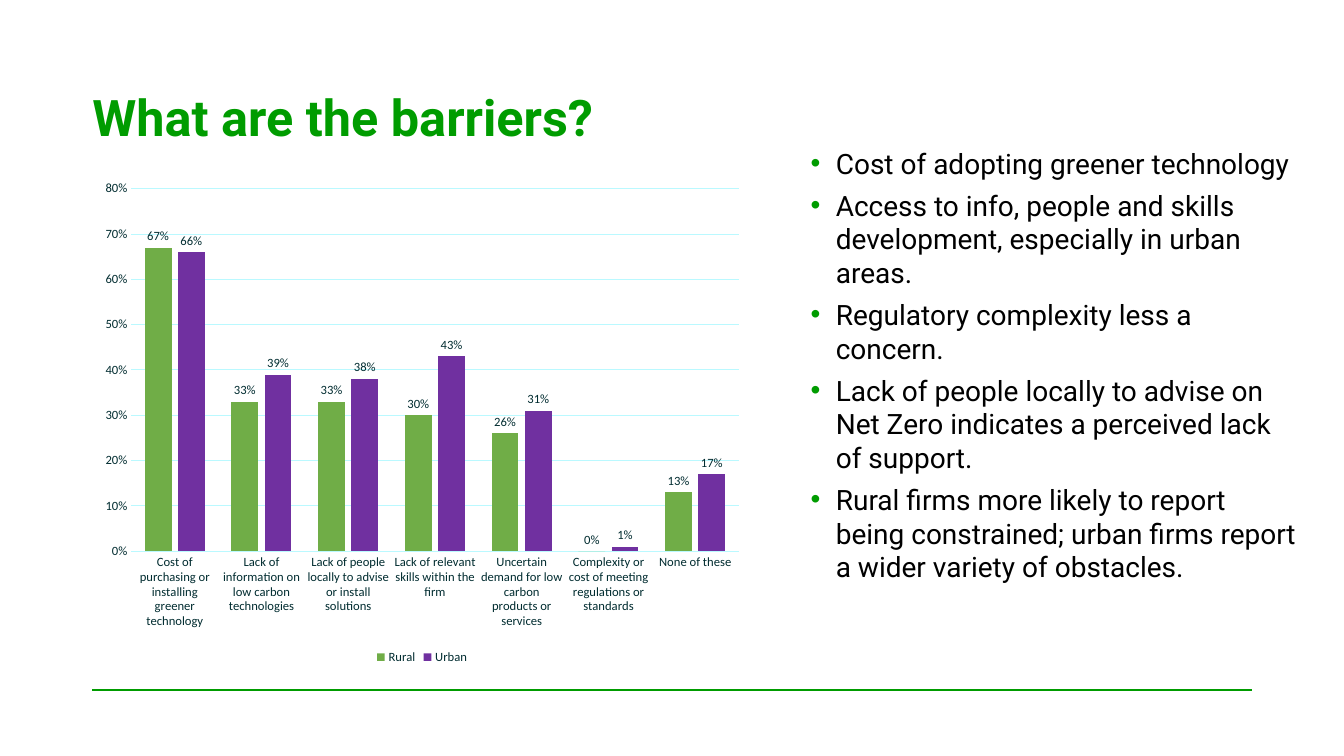
from dataclasses import dataclass

from lxml import etree
from pptx import Presentation
from pptx import util as u
from pptx.chart import data as cd
from pptx.dml import color as col
from pptx.enum import chart as ch
from pptx.enum import shapes, text
from pptx.oxml import ns


@dataclass(frozen=True)
class Theme:
    """Colours, fonts and type sizes of the slide."""
    green: str = "009C00"
    ink: str = "000000"
    label: str = "002C30"
    grid: str = "BAF9FF"
    rural: str = "70AD47"
    urban: str = "7030A0"
    face: str = "Roboto"
    plot: str = "Calibri"
    head: int = 36
    body: int = 20
    base: int = 10
    small: int = 9


class Deck:
    """Draws styled elements on the current slide."""

    def __init__(self, theme):
        self.theme = theme
        self.prs = Presentation()
        self.prs.slide_width, self.prs.slide_height = u.Pt(960), u.Pt(540)
        self.slide = self.prs.slides.add_slide(self.prs.slide_layouts[6])

    def rgb(self, tone):
        return col.RGBColor.from_string(tone)

    def font(self, font, face, size, tone, bold=False):
        font.name, font.size, font.bold = face, u.Pt(size), bold
        font.color.rgb = self.rgb(tone)

    def small(self, font):
        self.font(font, self.theme.plot, self.theme.small, self.theme.label)

    def stroke(self, line, tone, width):
        line.color.rgb = self.rgb(tone)
        line.width = u.Pt(width)

    def rule(self, left, top, right):
        line = self.slide.shapes.add_connector(
            shapes.MSO_CONNECTOR.STRAIGHT, u.Pt(left), u.Pt(top), u.Pt(right), u.Pt(top))
        self.stroke(line.line, self.theme.green, 1)
        etree.SubElement(line._element.spPr, ns.qn("a:effectLst"))

    def frame(self, box, anchor):
        frame = self.slide.shapes.add_textbox(*map(u.Pt, box)).text_frame
        frame.word_wrap, frame.vertical_anchor = True, anchor
        frame.margin_left = frame.margin_right = 0
        frame.margin_top = frame.margin_bottom = 0
        return frame

    def title(self, words, box):
        para = self.frame(box, text.MSO_ANCHOR.BOTTOM).paragraphs[0]
        para.line_spacing = 0.9
        run = para.add_run()
        run.text = words
        self.font(run.font, self.theme.face, self.theme.head, self.theme.green, True)

    def bullets(self, items, box):
        frame = self.frame(box, text.MSO_ANCHOR.TOP)
        for i, words in enumerate(items):
            para = frame.add_paragraph() if i else frame.paragraphs[0]
            para.space_before = u.Pt(6 if i else 0)
            props = para._p.get_or_add_pPr()
            props.set("marL", str(u.Pt(18)))
            props.set("indent", str(u.Pt(-18)))
            tone = etree.SubElement(props, ns.qn("a:buClr"))
            etree.SubElement(tone, ns.qn("a:srgbClr"), val=self.theme.green)
            etree.SubElement(props, ns.qn("a:buFont"), typeface="Arial")
            etree.SubElement(props, ns.qn("a:buChar"), char="•")
            run = para.add_run()
            run.text = words
            self.font(run.font, self.theme.face, self.theme.body, self.theme.ink)

    def columns(self, cats, rows, box):
        data = cd.CategoryChartData(number_format="0%")
        data.categories = cats
        for name, _, vals in rows:
            data.add_series(name, vals)
        chart = self.slide.shapes.add_chart(
            ch.XL_CHART_TYPE.COLUMN_CLUSTERED, *map(u.Pt, box), data).chart
        self.font(chart.font, self.theme.plot, self.theme.base, self.theme.ink)
        chart.has_title = False
        chart.has_legend = True
        chart.legend.position = ch.XL_LEGEND_POSITION.BOTTOM
        chart.legend.include_in_layout = False
        self.small(chart.legend.font)
        for axis in (chart.category_axis, chart.value_axis):
            axis.major_tick_mark = axis.minor_tick_mark = ch.XL_TICK_MARK.NONE
            self.small(axis.tick_labels.font)
        self.stroke(chart.category_axis.format.line, self.theme.grid, 0.75)
        axis = chart.value_axis
        axis.minimum_scale, axis.maximum_scale, axis.major_unit = 0, 0.8, 0.1
        axis.format.line.fill.background()
        axis.has_major_gridlines = True
        self.stroke(axis.major_gridlines.format.line, self.theme.grid, 0.75)
        axis.tick_labels.number_format = "0%"
        axis.tick_labels.number_format_is_linked = False
        plot = chart.plots[0]
        plot.gap_width, plot.overlap, plot.vary_by_categories = 100, -24, False
        for bars, (_, tone, _) in zip(plot.series, rows):
            bars.format.fill.solid()
            bars.format.fill.fore_color.rgb = self.rgb(tone)
            bars.invert_if_negative = False
            tags = bars.data_labels
            tags.show_value = True
            tags.number_format, tags.number_format_is_linked = "0%", False
            tags.position = ch.XL_LABEL_POSITION.OUTSIDE_END
            self.small(tags.font)


def main():
    theme = Theme()
    deck = Deck(theme)
    deck.rule(66, 493, 894)
    deck.title("What are the barriers?", (66, 24, 828, 81))
    deck.bullets([
        "Cost of adopting greener technology",
        "Access to info, people and skills development, especially in urban areas.",
        "Regulatory complexity less a concern.",
        "Lack of people locally to advise on Net Zero indicates a perceived lack of support.",
        "Rural firms more likely to report being constrained; "
        "urban firms report a wider variety of obstacles.",
    ], (579, 104.5, 350.5, 355))
    deck.columns([
        "Cost of purchasing or installing greener technology",
        "Lack of information on low carbon technologies",
        "Lack of people locally to advise or install solutions",
        "Lack of relevant skills within the firm",
        "Uncertain demand for low carbon products or services",
        "Complexity or cost of meeting regulations or standards",
        "None of these",
    ], [
        ("Rural", theme.rural, (0.67, 0.33, 0.33, 0.3, 0.26, 0, 0.13)),
        ("Urban", theme.urban, (0.66, 0.39, 0.38, 0.43, 0.31, 0.01, 0.17)),
    ], (66, 122.5, 471, 355))
    deck.prs.save("out.pptx")


if __name__ == "__main__":
    main()
